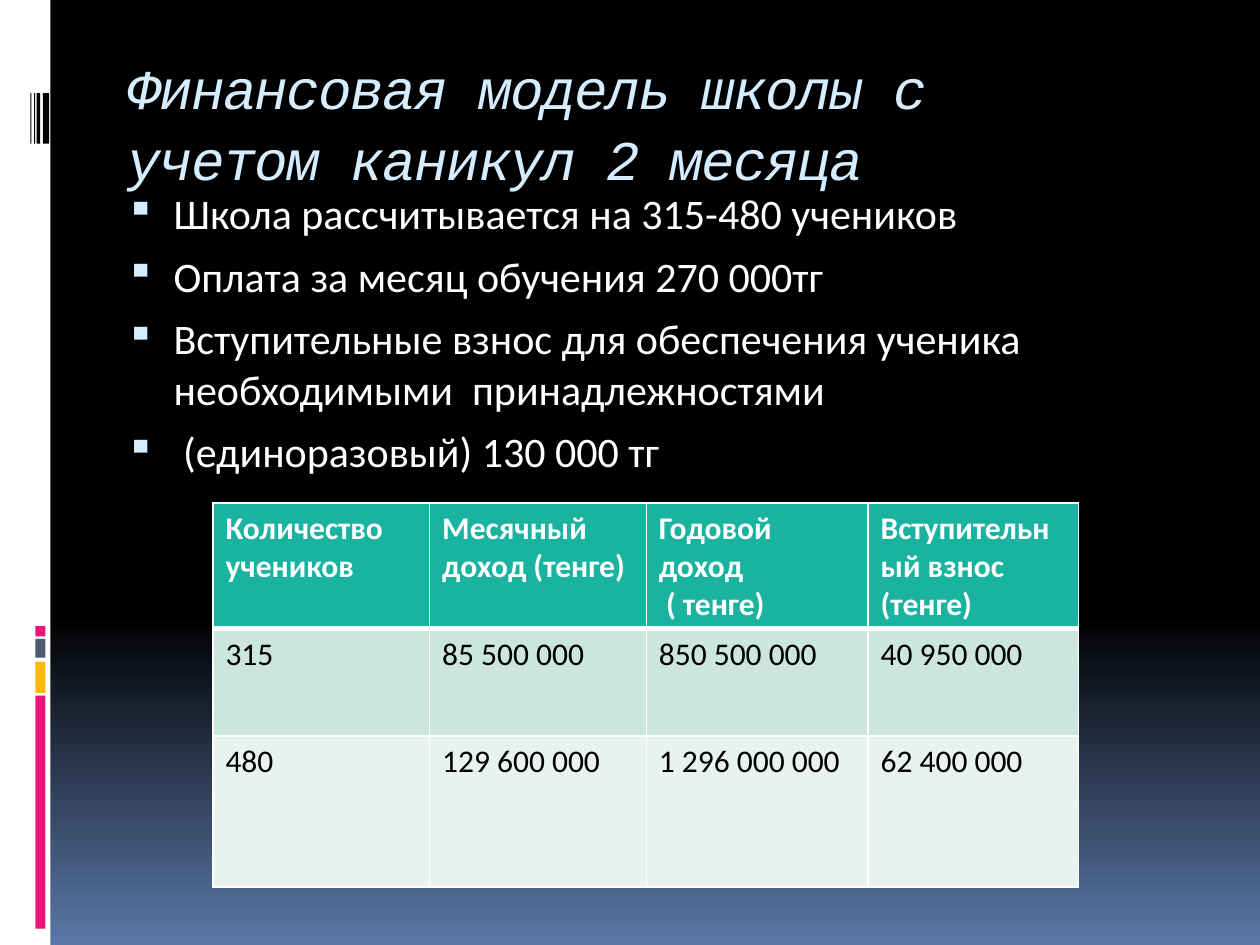
from dataclasses import dataclass

from lxml.etree import SubElement
from pptx import Presentation
from pptx.dml.color import RGBColor
from pptx.enum.shapes import MSO_SHAPE
from pptx.enum.text import MSO_ANCHOR, MSO_AUTO_SIZE, PP_ALIGN
from pptx.oxml.ns import qn
from pptx.util import Inches, Pt

COLORS = {
    "white": "FFFFFF", "black": "000000", "pink": "EA157A", "amber": "FEB80A",
    "slate": "4E5B6F", "ice": "D6ECFF", "dusk": "5B77A8",
    "header": "1AB39F", "band_dark": "CDE5DF", "band_light": "E8F2F0",
}
COLUMNS, ROWS = 100, 75  # slide grid
CELL = Inches(0.1)


@dataclass(frozen=True)
class Area:
    """A rectangle in grid columns and rows."""
    left: float
    top: float
    width: float
    height: float

    def lengths(self) -> list[int]:
        return [round(value * CELL)
                for value in (self.left, self.top, self.width, self.height)]


@dataclass(frozen=True)
class Bar:
    area: Area
    color: str


@dataclass(frozen=True)
class TableRow:
    height: float
    fill: str
    texts: tuple[str, ...]
    text_color: str = "black"
    bold: bool = False
    bottom_line: float = 1


SIDE_BARS = [
    Bar(Area(0, 0, 4, ROWS), "white"),
    *(Bar(Area(2.8, top, 0.8, height), color) for top, height, color in (
        (55.2, 18.5, "pink"), (52.5, 2.5, "amber"),
        (50.7, 1.5, "slate"), (49.7, 0.8, "pink"))),
    *(Bar(Area(left, 7.4, width, 4), "black") for left, width in (
        (3.4, 0.5), (2.9, 0.3), (2.7, 0.1), (2.4, 0.1))),
]
TITLE = "Финансовая модель школы с учетом каникул 2 месяца"
TITLE_AREA = Area(9.1, 2.9, 77.2, 9.9)
BULLETS = (
    "Школа рассчитывается на 315-480 учеников",
    "Оплата за месяц обучения 270 000тг",
    "Вступительные взнос для обеспечения ученика необходимыми  принадлежностями",
    " (единоразовый) 130 000 тг",
)
BULLETS_AREA = Area(8.3, 14.4, 85, 25)
TABLE_AREA = Area(16.9, 39.9, 68.7, 29)
TABLE_COLUMNS = (17.2, 17.2, 17.6, 16.7)
TABLE_ROWS = (
    TableRow(8.5, "header",
             ("Количество учеников", "Месячный доход (тенге)",
              "Годовой\nдоход\n ( тенге)", "Вступительный взнос (тенге)"),
             "white", True, 3),
    TableRow(8.5, "band_dark", ("315", "85 500 000", "850 500 000", "40 950 000")),
    TableRow(12, "band_light", ("480", "129 600 000", "1 296 000 000", "62 400 000")),
)


def rgb(name: str) -> RGBColor:
    return RGBColor.from_string(COLORS[name])


def format_font(font, color: str, **values) -> None:
    for name, value in values.items():
        setattr(font, name, value)
    font.color.rgb = rgb(color)


def paint_background(page) -> None:
    fill = page.background.fill
    fill.gradient()
    fill.gradient_angle = 270
    for stop, (position, color) in zip(
            fill.gradient_stops, ((0.65, "black"), (1, "dusk"))):
        stop.position = position
        stop.color.rgb = rgb(color)


def draw_bar(page, bar: Bar) -> None:
    shape = page.shapes.add_shape(MSO_SHAPE.RECTANGLE, *bar.area.lengths())
    shape.shadow.inherit = False
    shape.fill.solid()
    shape.fill.fore_color.rgb = rgb(bar.color)
    shape.line.fill.background()


def write_title(page) -> None:
    title = page.shapes.title
    title.left, title.top, title.width, title.height = TITLE_AREA.lengths()
    frame = title.text_frame
    frame_format = {"word_wrap": True, "auto_size": MSO_AUTO_SIZE.NONE,
                    "vertical_anchor": MSO_ANCHOR.TOP, "margin_top": Inches(0.11)}
    for name, value in frame_format.items():
        setattr(frame, name, value)
    para = frame.paragraphs[0]
    para.alignment = PP_ALIGN.LEFT
    para.line_spacing = 1.05
    span = para.add_run()
    span.text = TITLE
    format_font(span.font, "ice", name="Courier New", size=Pt(32), italic=True)
    span.font._element.set("spc", "-100")


def add_bullet(para) -> None:
    properties = para._p.get_or_add_pPr()
    properties.set("marL", str(Inches(0.45)))
    properties.set("indent", str(Inches(-0.38)))
    color = SubElement(properties, qn("a:buClr"))
    SubElement(color, qn("a:srgbClr"), val=COLORS["ice"])
    SubElement(properties, qn("a:buSzPct"), val="95000")
    SubElement(properties, qn("a:buChar"), char="▪")


def write_bullets(page) -> None:
    frame = page.shapes.add_textbox(*BULLETS_AREA.lengths()).text_frame
    frame.word_wrap = True
    for index, text in enumerate(BULLETS):
        para = frame.paragraphs[0] if index == 0 else frame.add_paragraph()
        para.space_before = Pt(7 if index else 0)
        add_bullet(para)
        span = para.add_run()
        span.text = text
        format_font(span.font, "white", name="Calibri", size=Pt(24))


def add_borders(cell, bottom_line: float, top_line: float) -> None:
    properties = cell._tc.get_or_add_tcPr()
    widths = {"a:lnL": 1, "a:lnR": 1, "a:lnT": top_line, "a:lnB": bottom_line}
    for tag, width in widths.items():
        line = SubElement(properties, qn(tag), w=str(Pt(width)))
        fill = SubElement(line, qn("a:solidFill"))
        SubElement(fill, qn("a:srgbClr"), val=COLORS["white"])


def draw_table(page) -> None:
    table = page.shapes.add_table(
        len(TABLE_ROWS), len(TABLE_COLUMNS), *TABLE_AREA.lengths()).table
    for column, width in zip(table.columns, TABLE_COLUMNS):
        column.width = round(width * CELL)
    top_line = 1
    for row, content in zip(table.rows, TABLE_ROWS):
        row.height = round(content.height * CELL)
        for cell, text in zip(row.cells, content.texts):
            cell.text = text
            for para in cell.text_frame.paragraphs:
                format_font(para.runs[0].font, content.text_color, name="Calibri",
                            size=Pt(18), bold=content.bold)
            add_borders(cell, content.bottom_line, top_line)
            cell.fill.solid()
            cell.fill.fore_color.rgb = rgb(content.fill)
        top_line = content.bottom_line


def main() -> None:
    deck = Presentation()
    deck.slide_width, deck.slide_height = COLUMNS * CELL, ROWS * CELL
    page = deck.slides.add_slide(deck.slide_layouts.get_by_name("Title Only"))

    # Backdrop and side decoration
    paint_background(page)
    for bar in SIDE_BARS:
        draw_bar(page, bar)

    # Text and figures
    write_title(page)
    write_bullets(page)
    draw_table(page)
    deck.save("out.pptx")


if __name__ == "__main__":
    main()
